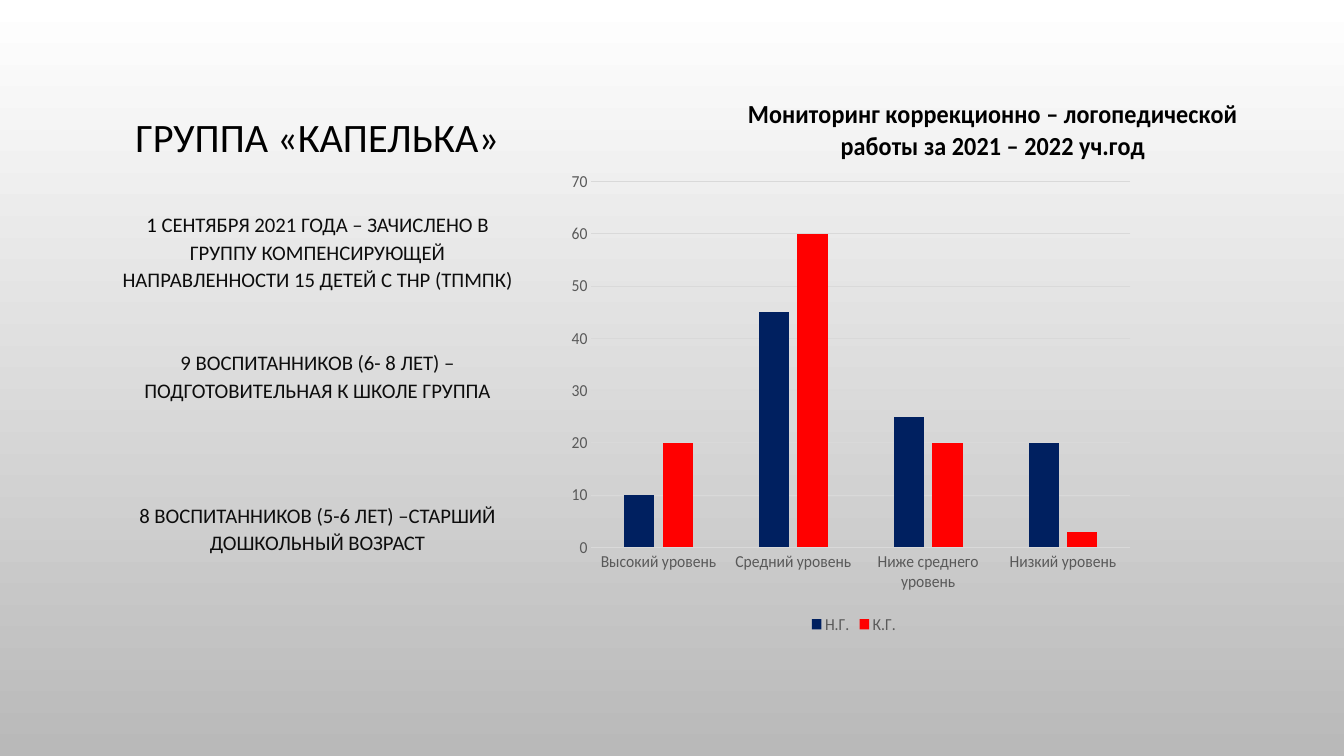
from lxml.etree import SubElement
from pptx import Presentation
from pptx.chart.data import CategoryChartData
from pptx.dml.color import RGBColor
from pptx.enum.chart import XL_CHART_TYPE, XL_LEGEND_POSITION, XL_TICK_MARK
from pptx.enum.text import MSO_ANCHOR, MSO_AUTO_SIZE, PP_ALIGN
from pptx.oxml import parse_xml
from pptx.oxml.ns import qn
from pptx.util import Cm, Pt


def style(font, size, color, bold=False):
    font.name = "Calibri"
    font.size = Pt(size)
    font.bold = bold
    font.color.rgb = RGBColor.from_string(color)


def place(node, index, **spots):
    for old in node.findall(qn("c:layout")):
        node.remove(old)
    layout = parse_xml('<c:layout xmlns:c="http://schemas.openxmlformats.org/drawingml/2006/chart"/>')
    manual = SubElement(layout, qn("c:manualLayout"))
    if "w" in spots:
        SubElement(manual, qn("c:layoutTarget")).set("val", "inner")
    for mode in ("xMode", "yMode"):
        SubElement(manual, qn("c:" + mode)).set("val", "edge")
    for key, val in spots.items():
        SubElement(manual, qn("c:" + key)).set("val", str(val))
    node.insert(index, layout)


deck = Presentation()
deck.slide_width, deck.slide_height = Cm(33.87), Cm(19.05)
slide = deck.slides.add_slide(deck.slide_layouts[7])

fill = slide.background.fill
fill.gradient()
fill.gradient_angle = 270
for stop, color in zip(fill.gradient_stops, ("FFFFFF", "B9B9B9")):
    stop.color.rgb = RGBColor.from_string(color)

title, spare, body = slide.placeholders
spare.element.getparent().remove(spare.element)

boxes = [
    (title, 1.7, 2.49, MSO_ANCHOR.BOTTOM, 28.8, 0.9, [
        (0, [("ГРУППА «КАПЕЛЬКА»", "000000")]),
    ]),
    (body, 5.16, 10.92, MSO_ANCHOR.TOP, 14.8, 1.1, [
        (0, [("1 ", "000000"),
             ("СЕНТЯБРЯ 2021 ГОДА – ЗАЧИСЛЕНО В ГРУППУ КОМПЕНСИРУЮЩЕЙ "
              "НАПРАВЛЕННОСТИ 15 ДЕТЕЙ С ТНР (ТПМПК)", "0D0D0D")]),
        (40, [("9 ВОСПИТАННИКОВ (6- 8 ЛЕТ) – ПОДГОТОВИТЕЛЬНАЯ К ШКОЛЕ ГРУППА", "0D0D0D")]),
        (70, [("8 ВОСПИТАННИКОВ (5-6 ЛЕТ) –СТАРШИЙ ДОШКОЛЬНЫЙ ВОЗРАСТ", "0D0D0D")]),
    ]),
]
for box, top, height, anchor, size, lines, paras in boxes:
    box.left, box.top, box.width, box.height = Cm(2.54), Cm(top), Cm(10.92), Cm(height)
    frame = box.text_frame
    frame.word_wrap = True
    frame.auto_size = MSO_AUTO_SIZE.NONE
    frame.vertical_anchor = anchor
    for i, (gap, runs) in enumerate(paras):
        para = frame.add_paragraph() if i else frame.paragraphs[0]
        para.alignment = PP_ALIGN.CENTER
        para.line_spacing = lines
        para.space_before = Pt(gap)
        for text, color in runs:
            run = para.add_run()
            run.text = text
            style(run.font, size, color)

data = CategoryChartData()
data.categories = ["Высокий уровень", "Средний уровень", "Ниже среднего уровень", "Низкий уровень"]
data.add_series("Н.Г.", (10, 45, 25, 20))
data.add_series("К.Г.", (20, 60, 20, 3))
chart = slide.shapes.add_chart(
    XL_CHART_TYPE.COLUMN_CLUSTERED, Cm(14.1), Cm(1.7), Cm(17.22), Cm(14.4), data).chart
style(chart.font, 10, "000000")

chart.has_title = True
head = chart.chart_title.text_frame.paragraphs[0].add_run()
head.text = "Мониторинг коррекционно – логопедической работы за 2021 – 2022 уч.год"
style(head.font, 18.6, "000000", True)

chart.has_legend = True
legend = chart.legend
legend.position = XL_LEGEND_POSITION.BOTTOM
legend.include_in_layout = False
style(legend.font, 12, "595959")

plot = chart.plots[0]
plot.gap_width, plot.overlap = 219, -27
plot.vary_by_categories = False
for series, color in zip(plot.series, ("002060", "FF0000")):
    series.format.fill.solid()
    series.format.fill.fore_color.rgb = RGBColor.from_string(color)

cats, vals = chart.category_axis, chart.value_axis
for axis in (cats, vals):
    axis.major_tick_mark = axis.minor_tick_mark = XL_TICK_MARK.NONE
    style(axis.tick_labels.font, 12, "595959")
vals.minimum_scale, vals.maximum_scale, vals.major_unit = 0, 70, 10
vals.format.line.fill.background()
for line in (cats.format.line, vals.major_gridlines.format.line):
    line.width = Pt(0.75)
    line.color.rgb = RGBColor.from_string("D9D9D9")

place(chart.chart_title._element, 1, x=0.29, y=0.04)
place(legend._element, 1, x=0.39, y=0.95)
place(plot._element.getparent(), 0, x=0.05, y=0.2, w=0.85, h=0.64)

deck.save("out.pptx")
